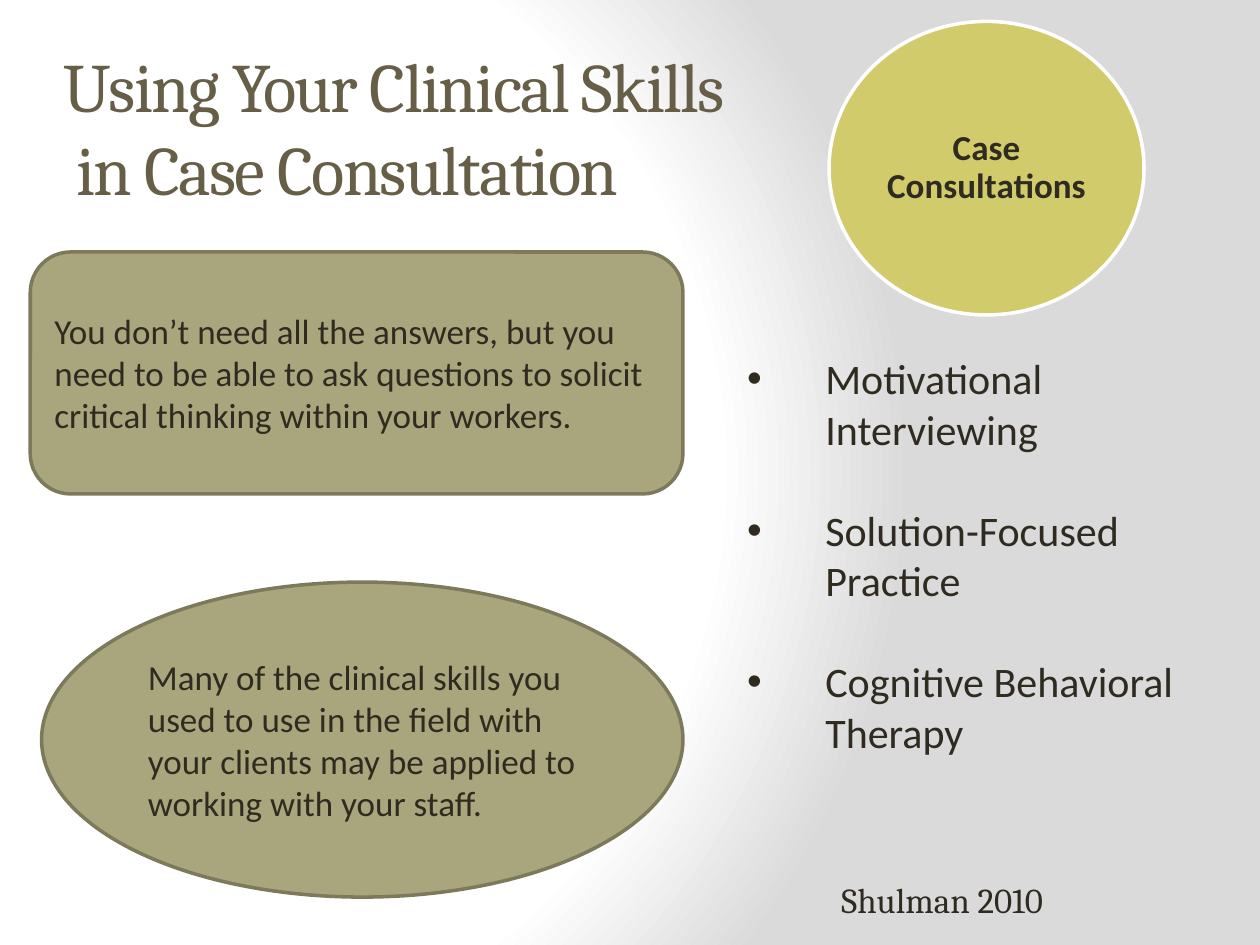
from pptx import Presentation
from pptx.dml.color import RGBColor
from pptx.enum.shapes import MSO_SHAPE
from pptx.enum.text import MSO_ANCHOR, MSO_AUTO_SIZE, PP_ALIGN
from pptx.oxml import parse_xml
from pptx.oxml.ns import nsdecls
from pptx.util import Inches, Pt

OVAL, ROUND = MSO_SHAPE.OVAL, MSO_SHAPE.ROUNDED_RECTANGLE
LEFT, CENTER = PP_ALIGN.LEFT, PP_ALIGN.CENTER
TOP, MIDDLE = MSO_ANCHOR.TOP, MSO_ANCHOR.MIDDLE
FIXED = MSO_AUTO_SIZE.NONE
WIDE, HIGH = 10, 7.5
INK, BROWN, OLIVE, EDGE = "2F2B20", "675E47", "A9A57C", "7D7A5C"
LIME, WHITE, GRAY = "D2CB6C", "FFFFFF", "DADADA"
SKILLS = ["Motivational Interviewing", "Solution-Focused Practice",
          "Cognitive Behavioral Therapy"]
ANSWERS = ("You don’t need all the answers, but you need to be able to ask "
           "questions to solicit critical thinking within your workers.")
FIELD = ("Many of the clinical skills you used to use in the field with your "
         "clients may be applied to working with your staff.")


def color(code):
    """Turn a hex string into a colour."""
    return RGBColor.from_string(code)


def place(shape, box):
    """Set left, top, width and height in inches."""
    shape.left, shape.top, shape.width, shape.height = map(Inches, box)


def write(shape, *lines, size=20, font="Calibri", ink=INK, bold=False,
          align=LEFT, anchor=MIDDLE, lead=None, gap=0, inset=None):
    """Fill a shape with formatted paragraphs and return them."""
    frame = shape.text_frame
    frame.word_wrap, frame.auto_size = True, FIXED
    frame.vertical_anchor = anchor
    if inset is not None:
        frame.margin_left = frame.margin_right = Inches(inset)
        frame.margin_top = frame.margin_bottom = Inches(inset)
    for i, line in enumerate(lines):
        para = frame.add_paragraph() if i else frame.paragraphs[0]
        para.text, para.alignment, para.line_spacing = line, align, lead
        para.space_before, para.space_after = Pt(gap if i else 0), Pt(0)
        for run in para.runs:
            run.font.size, run.font.name = Pt(size), font
            run.font.bold, run.font.color.rgb = bold, color(ink)
    return frame.paragraphs


def bubble(slide, kind, box, text, fill, edge, **form):
    """Draw a filled and outlined shape with text."""
    shape = slide.shapes.add_shape(kind, *map(Inches, box))
    shape.shadow.inherit = False
    shape.fill.solid()
    shape.fill.fore_color.rgb = color(fill)
    shape.line.color.rgb, shape.line.width = color(edge), Pt(2)
    write(shape, text, **form)


def glow(slide):
    """Give the slide a round gradient background."""
    stops = "".join(
        f'<a:gs pos="{pos * 1000}"><a:srgbClr val="{code}"/></a:gs>'
        for pos, code in ((0, WHITE), (75, WHITE), (100, GRAY)))
    slide.element.cSld.insert(0, parse_xml(
        f'<p:bg {nsdecls("p", "a")}><p:bgPr><a:gradFill rotWithShape="1">'
        f'<a:gsLst>{stops}</a:gsLst><a:path path="circle">'
        '<a:fillToRect l="20000" t="50000" r="100000" b="50000"/></a:path>'
        '</a:gradFill><a:effectLst/></p:bgPr></p:bg>'))


def head(shape, text):
    """Write the slide title with tight letters."""
    place(shape, (0.4, 0.38, 8.33, 1.25))
    for para in write(shape, text, size=39.6, font="Cambria", ink=BROWN):
        for run in para.runs:
            run.font._element.set("spc", "-100")


def bullets(shape, items):
    """Write the body list with hanging bullets."""
    place(shape, (5.83, 2.75, 4.17, 3.33))
    for para in write(shape, *items, size=24, anchor=TOP, gap=29):
        props = para._p.get_or_add_pPr()
        props.set("marL", str(Inches(0.62)))
        props.set("indent", str(-Inches(0.62)))
        props.append(parse_xml(f'<a:buFont {nsdecls("a")} typeface="Arial"/>'))
        props.append(parse_xml(f'<a:buChar {nsdecls("a")} char="•"/>'))


def main():
    """Build and save the slide."""
    deck = Presentation()
    deck.slide_width, deck.slide_height = Inches(WIDE), Inches(HIGH)
    slide = deck.slides.add_slide(deck.slide_layouts[1])
    glow(slide)
    head(slide.shapes.title,
         "Using Your Clinical Skills\v in Case Consultation")
    bullets(slide.placeholders[1], SKILLS)
    bubble(slide, OVAL, (6.58, 0.17, 2.5, 2.33), "Case Consultations",
           LIME, WHITE, bold=True, align=CENTER, lead=0.9, inset=0.01)
    source = slide.shapes.add_textbox(*map(Inches, (6.58, 6.92, 3.26, 0.44)))
    write(source, "Shulman 2010", font="Cambria", anchor=TOP)
    bubble(slide, ROUND, (0.24, 2, 5.18, 1.92), ANSWERS, OLIVE, EDGE)
    bubble(slide, OVAL, (0.33, 4.62, 5.09, 2.5), FIELD, OLIVE, EDGE)
    deck.save("out.pptx")


if __name__ == "__main__":
    main()
